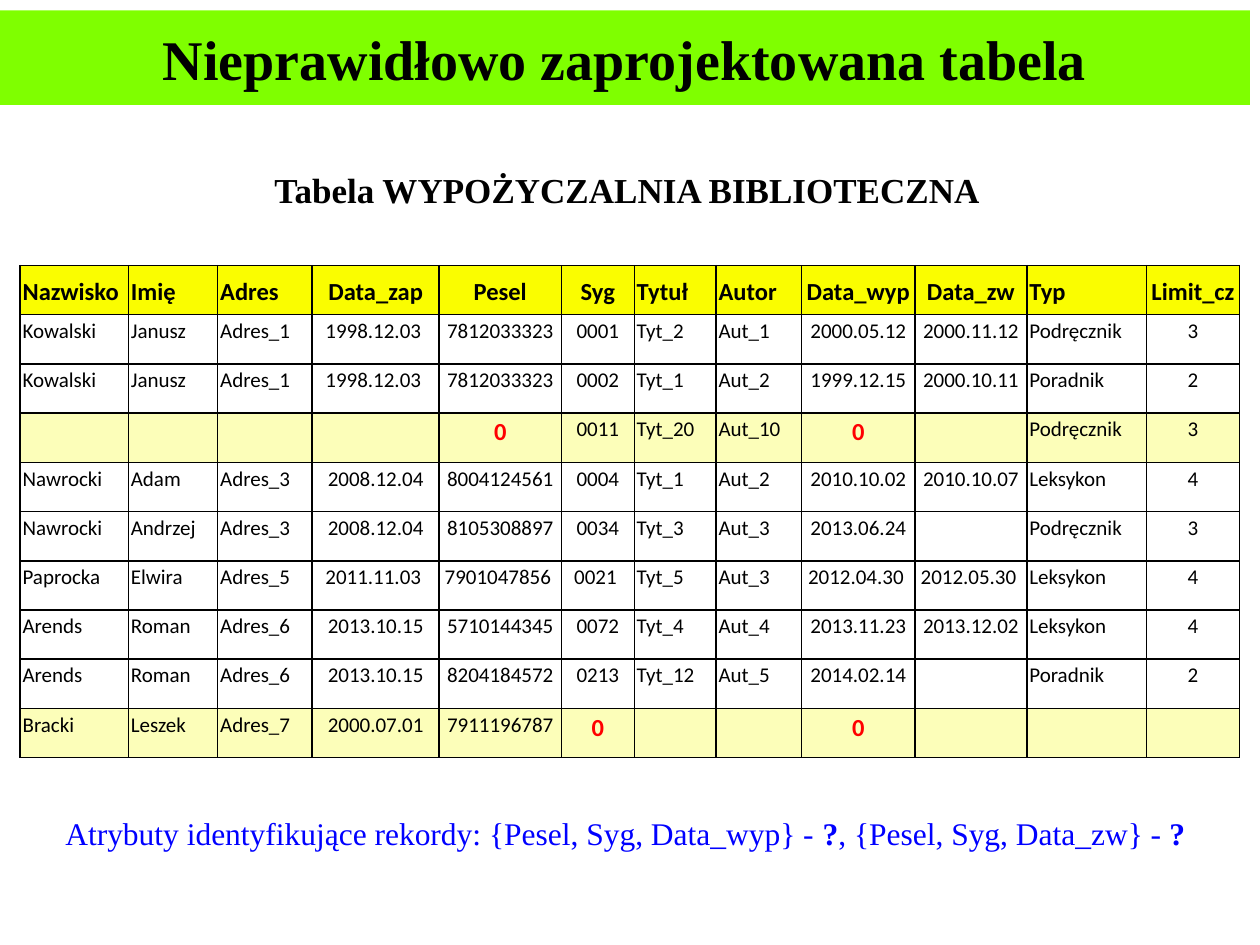
from lxml import etree
from pptx import Presentation
from pptx import util as u
from pptx.dml.color import RGBColor
from pptx.enum import shapes, text
from pptx.oxml import ns

BLACK = RGBColor(0x00, 0x00, 0x00)
BLUE = RGBColor(0x00, 0x00, 0xFF)
RED = RGBColor(0xFF, 0x00, 0x00)
GREEN = RGBColor(0x7F, 0xFF, 0x00)
YELLOW = RGBColor(0xFA, 0xFD, 0x00)
PALE_YELLOW = RGBColor(0xFC, 0xFE, 0xB9)

SERIF = "Times New Roman"
SANS = "Calibri"
WIDTH, HEIGHT = u.Inches(10), u.Inches(7.5)
MISSING_KEY = "0"

COLUMNS = [
    ("Nazwisko", 0.86, False), ("Imię", 0.71, False), ("Adres", 0.75, False),
    ("Data_zap", 1.01, True), ("Pesel", 0.97, True), ("Syg", 0.58, True),
    ("Tytuł", 0.65, False), ("Autor", 0.68, False), ("Data_wyp", 0.9, True),
    ("Data_zw", 0.89, True), ("Typ", 0.95, False), ("Limit_cz", 0.74, True),
]
RECORDS = [
    "Kowalski|Janusz|Adres_1|1998.12.03 |7812033323|0001|Tyt_2|Aut_1|2000.05.12|2000.11.12|Podręcznik|3",
    "Kowalski|Janusz|Adres_1|1998.12.03 |7812033323|0002|Tyt_1|Aut_2|1999.12.15|2000.10.11|Poradnik|2",
    "||||0|0011|Tyt_20|Aut_10|0||Podręcznik|3",
    "Nawrocki|Adam|Adres_3|2008.12.04|8004124561|0004|Tyt_1|Aut_2|2010.10.02|2010.10.07|Leksykon|4",
    "Nawrocki|Andrzej|Adres_3|2008.12.04|8105308897|0034|Tyt_3|Aut_3|2013.06.24||Podręcznik|3",
    "Paprocka|Elwira|Adres_5|2011.11.03 |7901047856 |0021 |Tyt_5|Aut_3|2012.04.30 |2012.05.30 |Leksykon|4",
    "Arends|Roman|Adres_6|2013.10.15|5710144345|0072|Tyt_4|Aut_4|2013.11.23|2013.12.02|Leksykon|4",
    "Arends|Roman|Adres_6|2013.10.15|8204184572|0213|Tyt_12|Aut_5|2014.02.14||Poradnik|2",
    "Bracki|Leszek|Adres_7|2000.07.01|7911196787|0|||0|||",
]


def share_box(left, top, width, height):
    return (int(WIDTH * left), int(HEIGHT * top),
            int(WIDTH * width), int(HEIGHT * height))


def add_run(paragraph, words, font_name, size, color, bold):
    run = paragraph.add_run()
    run.text = words
    run.font.name = font_name
    run.font.size = u.Pt(size)
    run.font.bold = bold
    run.font.color.rgb = color


def add_title_band(slide, box):
    band = slide.shapes.add_shape(shapes.MSO_SHAPE.RECTANGLE, *box)
    band.shadow.inherit = False
    band.fill.solid()
    band.fill.fore_color.rgb = GREEN
    band.line.fill.background()
    frame = band.text_frame
    frame.word_wrap = True
    frame.vertical_anchor = text.MSO_ANCHOR.MIDDLE
    frame.paragraphs[0].alignment = text.PP_ALIGN.CENTER
    add_run(frame.paragraphs[0], "Nieprawidłowo zaprojektowana tabela",
            SERIF, 32, BLACK, True)


def add_caption(slide, box, runs, size, color, wrap):
    frame = slide.shapes.add_textbox(*box).text_frame
    frame.word_wrap = wrap
    frame.auto_size = text.MSO_AUTO_SIZE.SHAPE_TO_FIT_TEXT
    for words, bold in runs:
        add_run(frame.paragraphs[0], words, SERIF, size, color, bold)


def add_borders(cell):
    properties = cell._tc.get_or_add_tcPr()
    for side in ("a:lnL", "a:lnR", "a:lnT", "a:lnB"):
        line = etree.SubElement(properties, ns.qn(side), w=str(u.Pt(1)))
        fill = etree.SubElement(line, ns.qn("a:solidFill"))
        etree.SubElement(fill, ns.qn("a:srgbClr"), val=str(BLACK))


def fill_cell(cell, value, centered, header, background):
    add_borders(cell)
    cell.margin_left = cell.margin_right = u.Inches(0.02)
    cell.margin_top = cell.margin_bottom = 0
    cell.vertical_anchor = text.MSO_ANCHOR.MIDDLE if header else text.MSO_ANCHOR.TOP
    if background is None:
        cell.fill.background()
    else:
        cell.fill.solid()
        cell.fill.fore_color.rgb = background
    paragraph = cell.text_frame.paragraphs[0]
    paragraph.line_spacing = 1.15
    paragraph.alignment = text.PP_ALIGN.CENTER if centered else text.PP_ALIGN.LEFT
    if value:
        missing = value == MISSING_KEY
        emphasis = header or missing
        add_run(paragraph, value, SANS, 14 if emphasis else 12,
                RED if missing else BLACK, emphasis)
    else:
        paragraph.font.size = u.Pt(12)


def add_loans_table(slide, box):
    rows = [[name for name, _, _ in COLUMNS]]
    rows += [record.split("|") for record in RECORDS]
    table = slide.shapes.add_table(len(rows), len(COLUMNS), *box).table
    table.first_row = table.horz_banding = False
    total = sum(width for _, width, _ in COLUMNS)
    for column, (_, width, _) in zip(table.columns, COLUMNS):
        column.width = int(box[2] * width / total)
    for index, values in enumerate(rows):
        header = index == 0
        table.rows[index].height = box[3] // len(rows)
        background = YELLOW if header else PALE_YELLOW if MISSING_KEY in values else None
        for position, value in enumerate(values):
            fill_cell(table.cell(index, position), value,
                      COLUMNS[position][2], header, background)


def main():
    presentation = Presentation()
    presentation.slide_width, presentation.slide_height = WIDTH, HEIGHT
    slide = presentation.slides.add_slide(presentation.slide_layouts[6])
    add_loans_table(slide, share_box(0.016, 0.281, 0.968, 0.521))
    add_title_band(slide, share_box(0, 0.011, 0.992, 0.1))
    add_caption(slide, share_box(0.208, 0.172, 0.584, 0.058),
                [("Tabela WYPOŻYCZALNIA BIBLIOTECZNA", True)], 20, BLACK, False)
    add_caption(slide, share_box(0.042, 0.855, 0.941, 0.054),
                [("Atrybuty identyfikujące rekordy: {Pesel, Syg, Data_wyp} - ", False),
                 ("?", True), (", {Pesel, Syg, Data_zw} - ", False), ("?", True)],
                18, BLUE, True)
    presentation.save("out.pptx")


if __name__ == "__main__":
    main()
